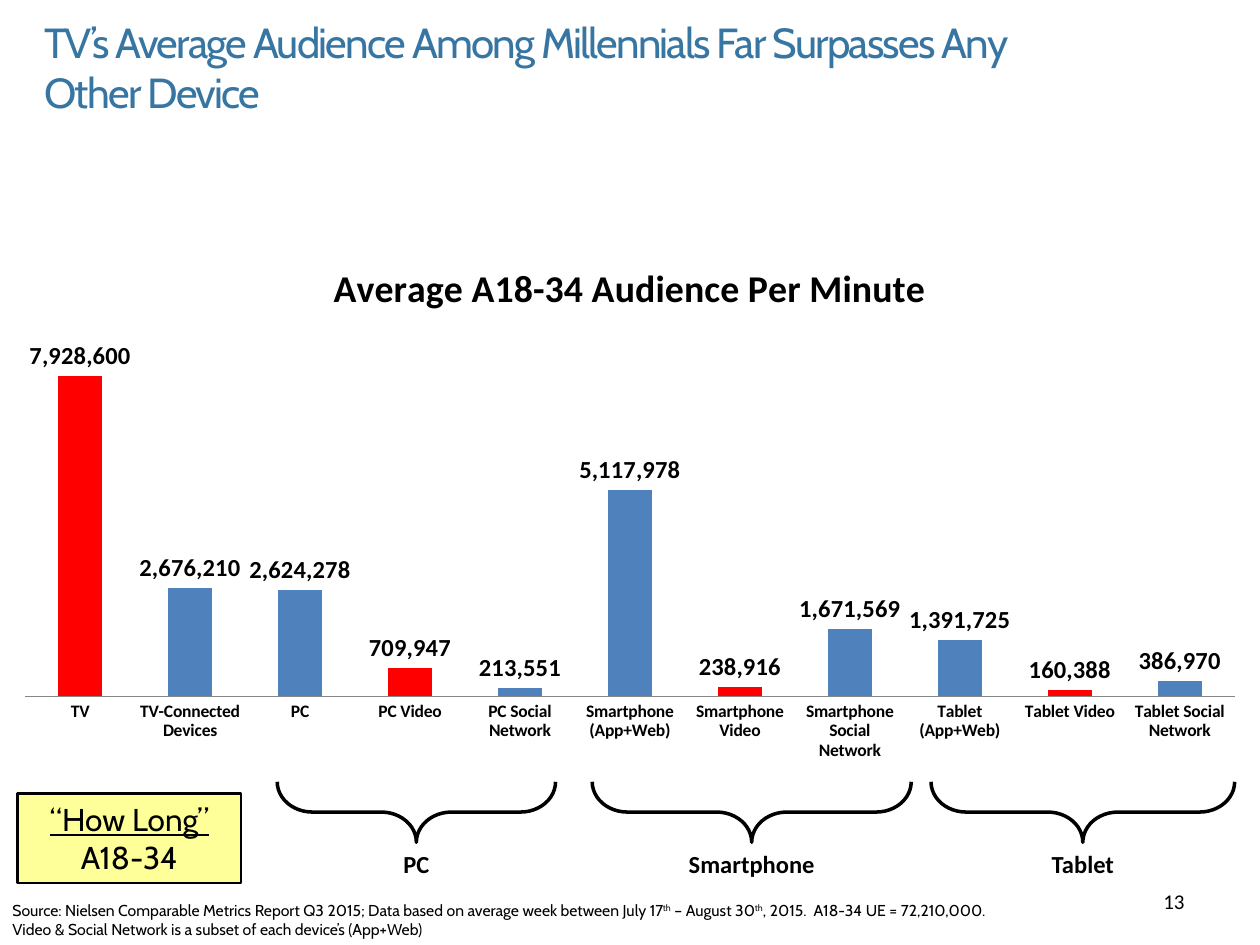
"""Build a slide charting the average millennial audience by device."""
from lxml.etree import SubElement
from pptx import Presentation
from pptx.chart.data import CategoryChartData
from pptx.dml.color import RGBColor
from pptx.enum.chart import XL_CHART_TYPE as CT, XL_LABEL_POSITION as LP, XL_TICK_MARK as TM
from pptx.enum.shapes import MSO_SHAPE as SH
from pptx.enum.text import MSO_ANCHOR as MA, PP_ALIGN as PA
from pptx.oxml import parse_xml
from pptx.oxml.ns import nsdecls, qn
from pptx.util import Cm, Pt


def rgb(hex_str):
    return RGBColor.from_string(hex_str)


def set_font(font, color="000000", **fmt):
    for name, value in fmt.items():
        setattr(font, name, Pt(value) if name == "size" else value)
    font.color.rgb = rgb(color)


class Deck:
    BLACK, BLUE, RED, YELLOW = "000000", "4F81BD", "FF0000", "FFFF99"
    TITLE, AXIS = "3775A2", "868686"
    HEAD, BODY = "Cabin", "Calibri"

    def __init__(self, width, height):
        self.prs = Presentation()
        self.prs.slide_width, self.prs.slide_height = Cm(width), Cm(height)
        self.s = self.prs.slides.add_slide(self.prs.slide_layouts[5])

    def fill_text(self, tf, paras, align=PA.LEFT, anchor=MA.TOP, **fmt):
        tf.word_wrap, tf.vertical_anchor = True, anchor
        for i, runs in enumerate(paras):
            p = tf.add_paragraph() if i else tf.paragraphs[0]
            p.alignment = align
            for text, extra in runs:
                extra = dict(extra)
                attrs = extra.pop("attrs", {})
                r = p.add_run()
                r.text = text
                set_font(r.font, **{**fmt, **extra})
                for key, value in attrs.items():
                    r.font._element.set(key, value)

    def title(self, text, x, y, w, h):
        sp = self.s.shapes.title
        sp.left, sp.top, sp.width, sp.height = map(Cm, (x, y, w, h))
        self.fill_text(sp.text_frame, [[(text, {"attrs": {"spc": "-100"}})]],
                       size=24, name=self.HEAD, color=self.TITLE)

    def text(self, paras, x, y, w, h, **fmt):
        sp = self.s.shapes.add_textbox(*map(Cm, (x, y, w, h)))
        self.fill_text(sp.text_frame, paras, **fmt)

    def shape(self, kind, x, y, w, h, line, fill=None):
        sp = self.s.shapes.add_shape(kind, *map(Cm, (x, y, w, h)))
        sp.shadow.inherit = False
        sp.line.color.rgb, sp.line.width = rgb(self.BLACK), Pt(line)
        if fill:
            sp.fill.solid()
            sp.fill.fore_color.rgb = rgb(fill)
        else:
            sp.fill.background()
        return sp

    def brace(self, label, x, w, cy=16.37, depth=1.22):
        sp = self.shape(SH.LEFT_BRACE, x + (w - depth) / 2, cy - w / 2, depth, w, 2)
        sp.rotation = 270
        sp.adjustments[0] = 0.58
        self.text([[(label, {})]], x, 17, w, 0.86, align=PA.CENTER,
                  size=14, name=self.BODY, bold=True)

    def chart(self, heading, data, red, x, y, w, h):
        cd = CategoryChartData(number_format="#,##0")
        cd.categories = list(data)
        cd.add_series("Series 1", list(data.values()))
        ch = self.s.shapes.add_chart(CT.COLUMN_CLUSTERED, *map(Cm, (x, y, w, h)), cd).chart
        set_font(ch.font, size=18, name=self.BODY)
        ch.has_legend, ch.has_title = False, True
        self.fill_text(ch.chart_title.text_frame, [[(heading, {})]], align=PA.CENTER,
                       size=21.6, name=self.BODY, bold=True)
        ch.chart_title.include_in_layout = False
        va, ca = ch.value_axis, ch.category_axis
        va.minimum_scale, va.maximum_scale = 0, 9000000
        va.visible = va.has_major_gridlines = False
        ca.major_tick_mark = TM.NONE
        ca.format.line.color.rgb = rgb(self.AXIS)
        set_font(ca.tick_labels.font, size=10, bold=True, name=self.BODY)
        plot = ch.plots[0]
        plot.gap_width, plot.overlap, plot.vary_by_categories = 150, -25, False
        ser = plot.series[0]
        ser.invert_if_negative = False
        ser.format.fill.solid()
        ser.format.fill.fore_color.rgb = rgb(self.BLUE)
        for i in red:
            fill = ser.points[i].format.fill
            fill.solid()
            fill.fore_color.rgb = rgb(self.RED)
        dl = ser.data_labels
        dl.show_value, dl.position = True, LP.OUTSIDE_END
        dl.number_format, dl.number_format_is_linked = "#,##0", False
        set_font(dl.font, size=14, bold=True, name=self.BODY)
        self.plot_layout(ch, x=0.02, y=0.18, w=0.96, h=0.68)

    def plot_layout(self, ch, **box):
        area = ch._chartSpace.chart.plotArea
        for old in area.findall(qn("c:layout")):
            area.remove(old)
        layout = parse_xml(f"<c:layout {nsdecls('c')}><c:manualLayout/></c:layout>")
        vals = {"layoutTarget": "inner", "xMode": "edge", "yMode": "edge", **box}
        for tag, value in vals.items():
            SubElement(layout[0], qn(f"c:{tag}")).set("val", str(value))
        area.insert(0, layout)


def main():
    d = Deck(25.4, 19.05)
    box = d.shape(SH.RECTANGLE, 0.36, 16, 4.5, 1.8, 1.5, d.YELLOW)
    d.fill_text(box.text_frame, [[("“How Long”", {"underline": True})], [("A18-34", {})]],
                align=PA.CENTER, anchor=MA.MIDDLE, size=18, name=d.HEAD)
    d.title("TV’s Average Audience Among Millennials Far Surpasses Any Other Device",
            0.64, 0.2, 20.85, 2.31)
    audience = {
        "TV": 7928600, "TV-Connected Devices": 2676210, "PC": 2624278,
        "PC Video": 709947, "PC Social Network": 213551,
        "Smartphone (App+Web)": 5117978, "Smartphone Video": 238916,
        "Smartphone Social Network": 1671569, "Tablet (App+Web)": 1391725,
        "Tablet Video": 160388, "Tablet Social Network": 386970,
    }
    d.chart("Average A18-34 Audience Per Minute", audience, range(0, 11, 3),
            0, 4.78, 25.4, 10.77)
    for label, x, w in (("PC", 5.59, 5.61), ("Smartphone", 11.94, 6.43), ("Tablet", 18.77, 6.12)):
        d.brace(label, x, w)
    sup = {"attrs": {"baseline": "30000"}}
    d.text([[("Source: Nielsen Comparable Metrics Report Q3 2015; Data based on average "
              "week between July 17", {}), ("th", sup), (" – August 30", {}), ("th", sup),
             (", 2015.  A18-34 UE = 72,210,000.", {})],
            [("Video & Social Network is a subset of each device’s (App+Web)", {})]],
           0, 18.03, 25.4, 1.02, size=9, name=d.HEAD)
    d.text([[("13", {})]], 18.21, 17.65, 5.92, 1.02, align=PA.RIGHT, anchor=MA.MIDDLE,
           size=12, name=d.BODY)
    d.prs.save("out.pptx")


if __name__ == "__main__":
    main()
